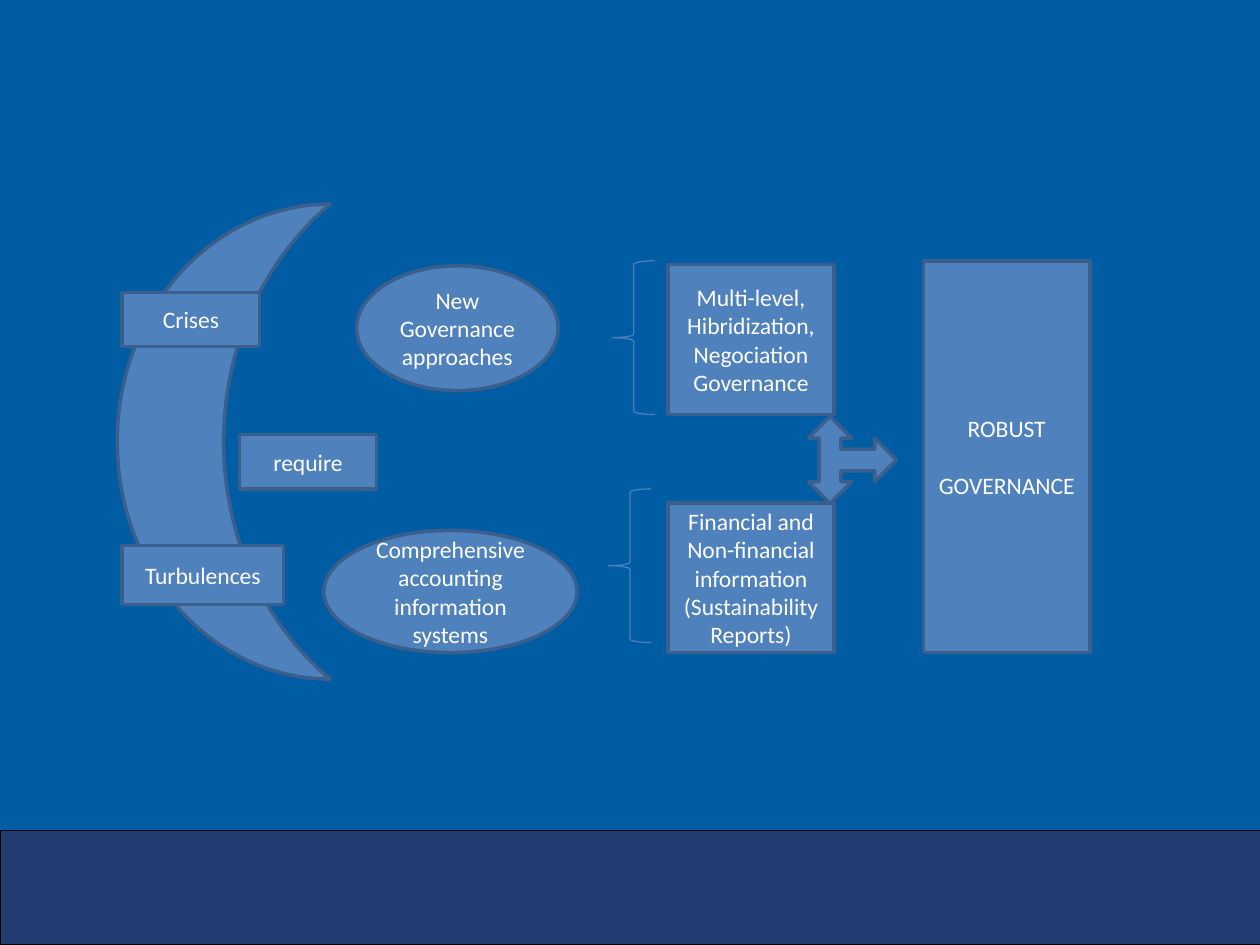
import pptx
import pptx.dml.color
import pptx.enum.shapes
import pptx.enum.text
import pptx.util

Inches = pptx.util.Inches
Pt = pptx.util.Pt
Shape = pptx.enum.shapes.MSO_SHAPE


def color(hex_string):
    return pptx.dml.color.RGBColor.from_string(hex_string)


class Diagram:
    """Holds the style and the slide being drawn."""

    FILL, OUTLINE, OUTLINE_WIDTH = "4F81BD", "3A5F8C", 2
    FONT = {"name": "Calibri", "size": Pt(13.5)}
    TEXT_COLOR = "FFFFFF"
    FRAME = {
        "word_wrap": True,
        "vertical_anchor": pptx.enum.text.MSO_ANCHOR.MIDDLE,
        "margin_left": Inches(0.08),
        "margin_right": Inches(0.08),
        "margin_top": Inches(0.04),
        "margin_bottom": Inches(0.04),
    }

    def __init__(self, slide, background):
        self.slide = slide
        slide.background.fill.solid()
        slide.background.fill.fore_color.rgb = color(background)

    def shape(self, kind, box, fill=FILL, line=OUTLINE, width=OUTLINE_WIDTH):
        shape = self.slide.shapes.add_shape(kind, *map(Inches, box))
        shape.shadow.inherit = False
        if fill:
            shape.fill.solid()
            shape.fill.fore_color.rgb = color(fill)
        else:
            shape.fill.background()
        shape.line.color.rgb = color(line)
        shape.line.width = Pt(width)
        return shape

    def labelled(self, kind, box, *lines, gap=0):
        """Draws a shape with one centred paragraph per line."""
        frame = self.shape(kind, box).text_frame
        for name, value in self.FRAME.items():
            setattr(frame, name, value)
        for index, line in enumerate(lines):
            paragraph = frame.add_paragraph() if index else frame.paragraphs[0]
            paragraph.alignment = pptx.enum.text.PP_ALIGN.CENTER
            if index and gap:
                paragraph.space_before = Pt(gap)
            run = paragraph.add_run()
            run.text = line
            for name, value in self.FONT.items():
                setattr(run.font, name, value)
            run.font.color.rgb = color(self.TEXT_COLOR)

    def brace(self, left, top):
        self.shape(Shape.LEFT_BRACE, (left, top, 0.34, 1.22),
                   fill=None, line="4B7EBC", width=0.75)


def main():
    presentation = pptx.Presentation()
    presentation.slide_width = Inches(10)
    presentation.slide_height = Inches(7.5)
    slide = presentation.slides.add_slide(presentation.slide_layouts[6])
    diagram = Diagram(slide, "005DA3")

    diagram.shape(Shape.RECTANGLE, (0, 6.59, 10.12, 0.91),
                  fill="223D71", line="000000", width=0.75)
    diagram.shape(Shape.MOON, (0.93, 1.62, 1.69, 3.77))

    diagram.labelled(Shape.RECTANGLE, (0.97, 2.32, 1.09, 0.43), "Crises")
    diagram.labelled(Shape.RECTANGLE, (0.97, 4.33, 1.28, 0.47), "Turbulences")
    diagram.labelled(Shape.OVAL, (2.57, 4.21, 2.01, 0.97),
                     "Comprehensive accounting information systems")
    diagram.labelled(Shape.OVAL, (2.83, 2.11, 1.6, 0.99),
                     "New Governance approaches")

    diagram.labelled(Shape.RECTANGLE, (5.3, 3.99, 1.32, 1.19),
                     "Financial and Non-financial information (Sustainability",
                     "Reports)")
    diagram.labelled(Shape.RECTANGLE, (5.3, 2.1, 1.32, 1.19),
                     "Multi-level,", "Hibridization,", "Negociation", "Governance")
    diagram.labelled(Shape.RECTANGLE, (7.33, 2.07, 1.32, 3.11),
                     "ROBUST", "GOVERNANCE", gap=16.2)

    diagram.brace(4.86, 2.07)
    diagram.brace(4.83, 3.88)
    diagram.labelled(Shape.RECTANGLE, (1.9, 3.45, 1.09, 0.43), "require")
    arrow = diagram.shape(Shape.LEFT_RIGHT_UP_ARROW, (6.42, 3.3, 0.69, 0.7))
    arrow.rotation = 90

    presentation.save("out.pptx")


if __name__ == "__main__":
    main()
